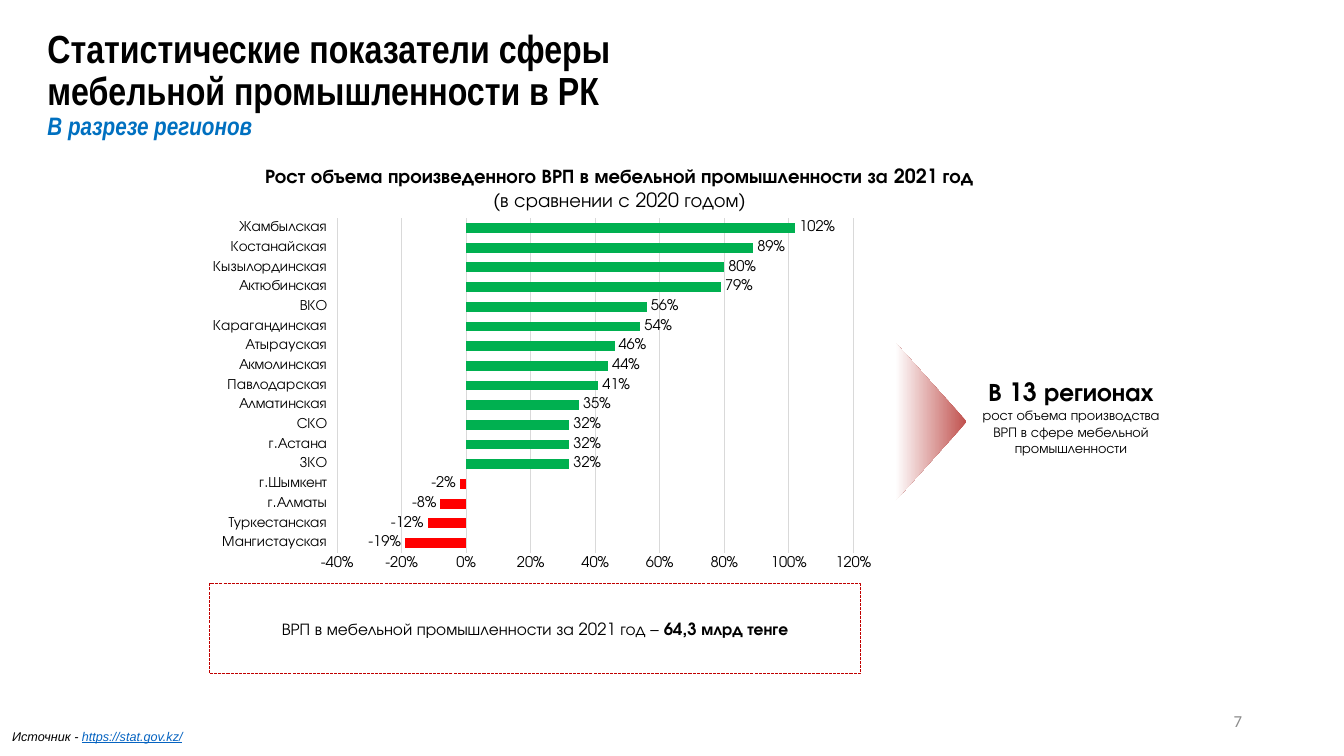
from lxml import etree
from pptx import Presentation
from pptx.chart.data import CategoryChartData
from pptx.dml.color import RGBColor
from pptx.enum.chart import XL_CHART_TYPE, XL_LABEL_POSITION, XL_TICK_LABEL_POSITION, XL_TICK_MARK
from pptx.enum.dml import MSO_LINE
from pptx.enum.shapes import MSO_SHAPE
from pptx.enum.text import MSO_ANCHOR, PP_ALIGN
from pptx.oxml.ns import qn
from pptx.util import Inches, Pt

BARS = XL_CHART_TYPE.BAR_CLUSTERED
OUTSIDE_END = XL_LABEL_POSITION.OUTSIDE_END
LOW = XL_TICK_LABEL_POSITION.LOW
NO_TICK = XL_TICK_MARK.NONE
DASH = MSO_LINE.SQUARE_DOT
TRIANGLE, RECTANGLE = MSO_SHAPE.ISOSCELES_TRIANGLE, MSO_SHAPE.RECTANGLE
TOP, MIDDLE = MSO_ANCHOR.TOP, MSO_ANCHOR.MIDDLE
LEFT, CENTER, RIGHT = PP_ALIGN.LEFT, PP_ALIGN.CENTER, PP_ALIGN.RIGHT

BLACK = RGBColor(0x00, 0x00, 0x00)
WHITE = RGBColor(0xFF, 0xFF, 0xFF)
GREY = RGBColor(0x8C, 0x8C, 0x8C)
PALE_GREY = RGBColor(0xD9, 0xD9, 0xD9)
BLUE = RGBColor(0x00, 0x70, 0xC0)
LINK_BLUE = RGBColor(0x05, 0x63, 0xC1)
GREEN = RGBColor(0x00, 0xB0, 0x50)
RED = RGBColor(0xFF, 0x00, 0x00)
DARK_RED = RGBColor(0xC0, 0x00, 0x00)
BRICK = RGBColor(0xC0, 0x50, 0x4D)

COLUMNS, ROWS = 32, 18
BODY_FONT = "TeX Gyre Adventor"
GROWTH = {
    "Мангистауская": -0.19, "Туркестанская": -0.12, "г.Алматы": -0.08,
    "г.Шымкент": -0.02, "ЗКО": 0.32, "г.Астана": 0.32, "СКО": 0.32,
    "Алматинская": 0.35, "Павлодарская": 0.41, "Акмолинская": 0.44,
    "Атырауская": 0.46, "Карагандинская": 0.54, "ВКО": 0.56,
    "Актюбинская": 0.79, "Кызылординская": 0.8, "Костанайская": 0.89,
    "Жамбылская": 1.02,
}


def format_font(font, size=12, name=BODY_FONT, color=BLACK, bold=False, italic=False, underline=False):
    """Apply a complete character format to a font."""
    font.size, font.name = Pt(size), name
    font.bold, font.italic, font.underline = bold, italic, underline
    font.color.rgb = color


def add_text(paragraph, text, **style):
    """Add formatted text, turning each newline into a line break."""
    for index, line in enumerate(text.split("\n")):
        if index:
            paragraph.add_line_break()
        if line:
            run = paragraph.add_run()
            run.text = line
            format_font(run.font, **style)


class SlideBuilder:
    """Draw styled elements on one slide, placed by grid columns and rows."""

    def __init__(self, presentation):
        """Add a title-only slide and measure its grid."""
        self.slide = presentation.slides.add_slide(presentation.slide_layouts[5])
        self.column = presentation.slide_width / COLUMNS
        self.row = presentation.slide_height / ROWS

    def place(self, left, top, width, height):
        """Turn grid units into slide lengths."""
        return (round(left * self.column), round(top * self.row),
                round(width * self.column), round(height * self.row))

    def fill_text(self, shape, paragraphs, alignment=CENTER, anchor=MIDDLE, line_spacing=1.0):
        """Fill a shape with paragraphs made of (text, style) pieces."""
        frame = shape.text_frame
        frame.word_wrap = True
        frame.vertical_anchor = anchor
        for index, pieces in enumerate(paragraphs):
            paragraph = frame.add_paragraph() if index else frame.paragraphs[0]
            paragraph.alignment = alignment
            paragraph.line_spacing = line_spacing
            for text, style in pieces:
                add_text(paragraph, text, **style)

    def title(self, area, pieces):
        """Move and fill the title placeholder."""
        title = self.slide.shapes.title
        title.left, title.top, title.width, title.height = self.place(*area)
        self.fill_text(title, [pieces], alignment=LEFT, line_spacing=0.9)

    def text(self, area, paragraphs, margins=True, **layout):
        """Add a text box."""
        box = self.slide.shapes.add_textbox(*self.place(*area))
        if not margins:
            frame = box.text_frame
            frame.margin_left = frame.margin_right = frame.margin_bottom = 0
            frame.margin_top = Inches(0.01)
        self.fill_text(box, paragraphs, **layout)

    def shape(self, kind, area):
        """Add a preset shape without a shadow."""
        shape = self.slide.shapes.add_shape(kind, *self.place(*area))
        shape.shadow.inherit = False
        return shape

    def arrow(self, area):
        """Add a triangle pointing right that fades towards its base."""
        arrow = self.shape(TRIANGLE, area)
        arrow.rotation = 90
        arrow.line.fill.background()
        arrow.fill.gradient()
        arrow.fill.gradient_angle = 270
        for stop, color, position in zip(arrow.fill.gradient_stops, (BRICK, WHITE), (0, 1)):
            stop.color.rgb = color
            stop.position = position

    def frame(self, area, paragraphs):
        """Add an unfilled dashed rectangle with text."""
        frame = self.shape(RECTANGLE, area)
        frame.fill.background()
        frame.line.color.rgb = DARK_RED
        frame.line.width = Pt(0.75)
        frame.line.dash_style = DASH
        self.fill_text(frame, paragraphs)

    def chart(self, area, values, plot_area):
        """Add a bar chart with bars coloured by sign."""
        data = CategoryChartData(number_format="0%")
        data.categories = list(values)
        data.add_series("Series 1", list(values.values()))
        chart = self.slide.shapes.add_chart(BARS, *self.place(*area), data).chart
        chart.has_legend = chart.has_title = False
        format_font(chart.font, size=10.5)
        plot = chart.plots[0]
        plot.gap_width = 100
        plot.vary_by_categories = False
        plot.has_data_labels = True
        labels = plot.data_labels
        labels.show_value = True
        labels.position = OUTSIDE_END
        labels.number_format, labels.number_format_is_linked = "0%", False
        format_font(labels.font, size=10.5)
        series = plot.series[0]
        series.invert_if_negative = False
        for index, value in enumerate(values.values()):
            fill = series.points[index].format.fill
            fill.solid()
            fill.fore_color.rgb = GREEN if value > 0 else RED
        self.axes(chart)
        self.fix_plot_area(chart, plot_area)

    def axes(self, chart):
        """Format both axes and the gridlines."""
        regions, growth = chart.category_axis, chart.value_axis
        for axis in (regions, growth):
            axis.major_tick_mark = axis.minor_tick_mark = NO_TICK
            format_font(axis.tick_labels.font, size=10.5)
        regions.tick_label_position = LOW
        regions.has_major_gridlines = False
        growth.minimum_scale, growth.maximum_scale, growth.major_unit = -0.4, 1.2, 0.2
        growth.tick_labels.number_format = "0%"
        growth.tick_labels.number_format_is_linked = False
        growth.format.line.fill.background()
        growth.has_major_gridlines = True
        for line in (regions.format.line, growth.major_gridlines.format.line):
            line.color.rgb = PALE_GREY
            line.width = Pt(0.75)

    def fix_plot_area(self, chart, shares):
        """Set the inner plot area as shares of the chart."""
        plot_area = chart.element.find(".//" + qn("c:plotArea"))
        for layout in plot_area.findall(qn("c:layout")):
            plot_area.remove(layout)
        layout = etree.Element(qn("c:layout"))
        manual = etree.SubElement(layout, qn("c:manualLayout"))
        settings = [("layoutTarget", "inner"), ("xMode", "edge"), ("yMode", "edge"),
                    *zip("xywh", shares)]
        for name, value in settings:
            etree.SubElement(manual, qn("c:" + name)).set("val", str(value))
        plot_area.insert(0, layout)


def main():
    """Build and save the slide."""
    presentation = Presentation()
    presentation.slide_width, presentation.slide_height = Inches(13.33), Inches(7.5)
    builder = SlideBuilder(presentation)
    narrow = {"name": "Arial Narrow", "bold": True}
    source = {"name": "Arial", "size": 9, "italic": True}
    builder.text((22.61, 16.68, 7.2, 0.96),
                 [[("7", {"name": "Calibri", "color": GREY})]], alignment=RIGHT)
    builder.title((0.89, 0.84, 20.35, 2.38), [
        ("Статистические показатели сферы\nмебельной промышленности в РК\n", {**narrow, "size": 28}),
        ("В разрезе регионов", {**narrow, "size": 18, "color": BLUE, "italic": True}),
    ])
    builder.text((5.14, 3.79, 19.22, 1.37), [
        [("Рост объема произведенного ВРП в мебельной промышленности за 2021 год",
          {"size": 14, "bold": True})],
        [("(в сравнении с 2020 годом)", {"size": 14})],
    ], anchor=TOP)
    builder.arrow((20.28, 9.19, 3.77, 1.7))
    builder.text((23.04, 8.69, 4.92, 2.45), [
        [("В 13 регионах", {"size": 18, "bold": True})],
        [("рост объема производства ВРП в сфере мебельной промышленности", {"size": 10})],
    ])
    builder.frame((4.99, 13.9, 15.5, 2.14), [[
        ("ВРП в мебельной промышленности за 2021 год – ", {}),
        ("64,3 млрд тенге", {"bold": True}),
    ]])
    builder.chart((4.75, 5.02, 16.39, 8.76), GROWTH, (0.2, 0.02, 0.75, 0.91))
    builder.text((0.29, 17.33, 28.68, 0.41), [[
        ("Источник - ", source),
        ("https://stat.gov.kz/", {**source, "color": LINK_BLUE, "underline": True}),
    ]], margins=False, alignment=LEFT, anchor=TOP)
    presentation.save("out.pptx")


if __name__ == "__main__":
    main()
